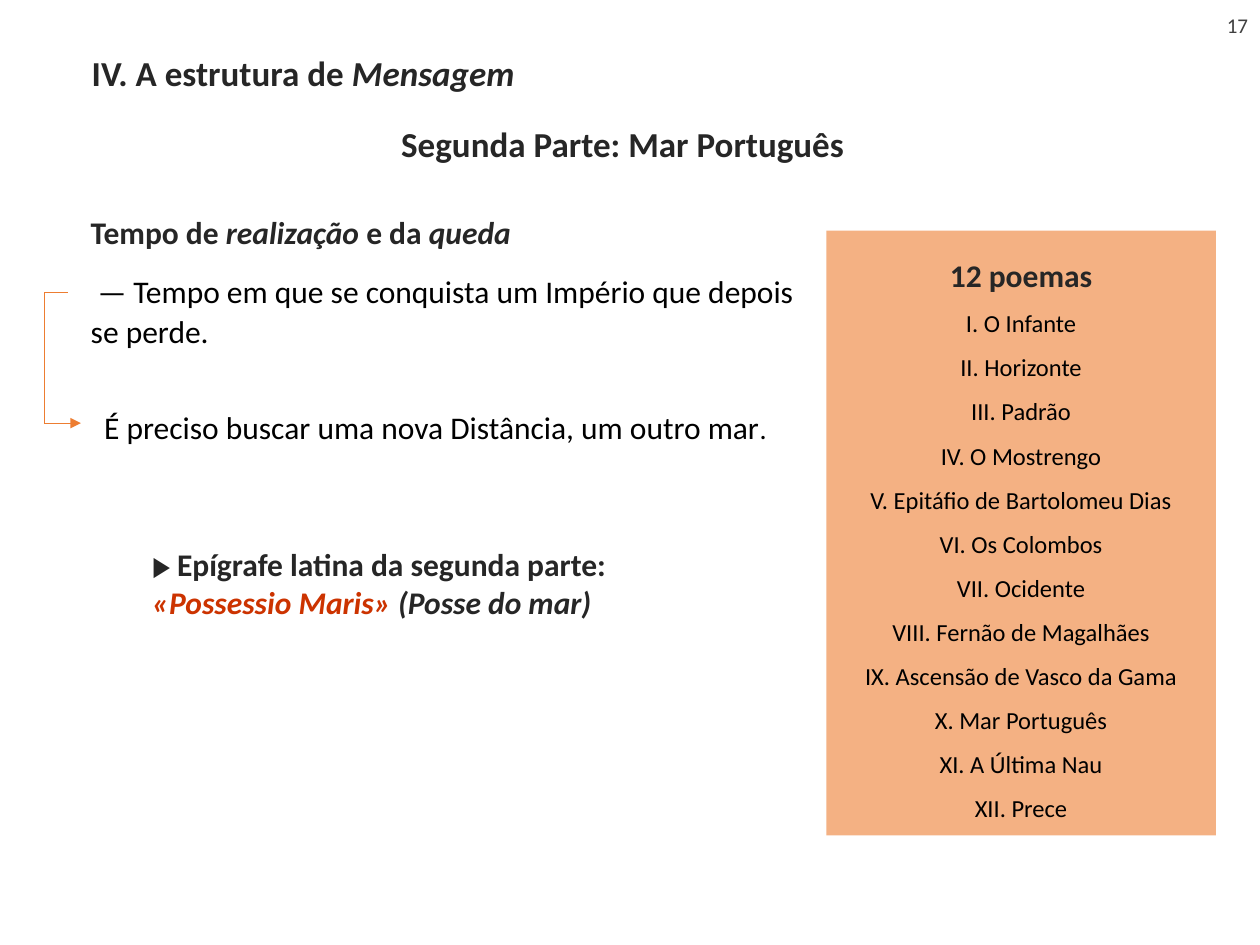
import lxml.etree
import pptx
import pptx.dml.color
import pptx.enum.shapes
import pptx.enum.text
import pptx.oxml.ns
import pptx.util

Cm = pptx.util.Cm
Pt = pptx.util.Pt
color = pptx.dml.color.RGBColor.from_string
ALIGN = pptx.enum.text.PP_ALIGN
DARK, BLACK, GREY, RED = "262626", "000000", "404040", "CC3300"
ORANGE, PEACH = "ED7D31", "F4B183"

presentation = pptx.Presentation()
presentation.slide_width = Cm(25.4)
presentation.slide_height = Cm(19.05)
slide = presentation.slides.add_slide(presentation.slide_layouts[6])


def add_text_box(left, top, width, height):
    frame = slide.shapes.add_textbox(Cm(left), Cm(top), Cm(width), Cm(height)).text_frame
    frame.word_wrap = True
    return frame


def write_paragraph(paragraph, runs, align=ALIGN.LEFT, spacing=None):
    """Each run is (text, size, colour, style), style holding b and/or i."""
    paragraph.alignment = align
    paragraph.line_spacing = spacing
    for text, size, colour, style in runs:
        run = paragraph.add_run()
        run.text = text
        run.font.name = "Calibri"
        run.font.size = Pt(size)
        run.font.bold = "b" in style
        run.font.italic = "i" in style
        run.font.color.rgb = color(colour)


# Time of achievement and fall
frame = add_text_box(1.65, 4.29, 14.99, 2.79)
frame.margin_left = frame.margin_right = Cm(0.18)
frame.margin_top = frame.margin_bottom = Cm(0.1)
write_paragraph(frame.paragraphs[0], [
    ("Tempo de ", 18, DARK, "b"),
    ("realização", 18, DARK, "bi"),
    (" e da ", 18, DARK, "b"),
    ("queda", 18, DARK, "bi"),
], spacing=0.9)
paragraph = frame.add_paragraph()
paragraph.space_before = Pt(10)
write_paragraph(paragraph, [
    (" — Tempo em que se conquista um Império que depois se perde.", 18, BLACK, ""),
], spacing=Pt(23))

# Panel with the list of poems
panel = slide.shapes.add_shape(
    pptx.enum.shapes.MSO_SHAPE.RECTANGLE, Cm(16.66), Cm(4.65), Cm(7.85), Cm(12.19))
panel.shadow.inherit = False
panel.fill.solid()
panel.fill.fore_color.rgb = color(PEACH)
panel.line.fill.background()
frame = panel.text_frame
frame.word_wrap = True
frame.vertical_anchor = pptx.enum.text.MSO_ANCHOR.TOP
write_paragraph(frame.paragraphs[0], [("12 poemas", 18, DARK, "b")], ALIGN.CENTER, 1.5)
poems = [
    "I. O Infante", "II. Horizonte", "III. Padrão", "IV. O Mostrengo",
    "V. Epitáfio de Bartolomeu Dias", "VI. Os Colombos", "VII. Ocidente",
    "VIII. Fernão de Magalhães", "IX. Ascensão de Vasco da Gama",
    "X. Mar Português", "XI. A Última Nau", "XII. Prece",
]
for poem in poems:
    write_paragraph(frame.add_paragraph(), [(poem, 14, BLACK, "")], ALIGN.CENTER, 1.5)

# Page number
frame = add_text_box(19.69, 0, 5.72, 1.02)
frame.vertical_anchor = pptx.enum.text.MSO_ANCHOR.MIDDLE
write_paragraph(frame.paragraphs[0], [("17", 12, GREY, "")], ALIGN.RIGHT)

# Title, set in a little from its box
frame = add_text_box(1.22, 1.07, 15.11, 0.97)
frame.margin_left = Cm(0.63)
write_paragraph(frame.paragraphs[0], [
    ("IV. A estrutura de ", 20, DARK, "b"),
    ("Mensagem", 20, DARK, "bi"),
], spacing=0.8)

# Subtitle
frame = add_text_box(7.21, 2.51, 10.69, 0.97)
write_paragraph(frame.paragraphs[0], [
    ("Segunda Parte: Mar Português", 20, DARK, "b"),
], ALIGN.CENTER, 0.8)

# Bracket arrow from the first statement to the second
corners = [(1.37, 5.89), (0.89, 5.89), (0.89, 8.53), (1.63, 8.53)]
for (start_x, start_y), (end_x, end_y) in zip(corners, corners[1:]):
    connector = slide.shapes.add_connector(
        pptx.enum.shapes.MSO_CONNECTOR.STRAIGHT,
        Cm(start_x), Cm(start_y), Cm(end_x), Cm(end_y))
    connector.line.color.rgb = color(ORANGE)
    connector.line.width = Pt(0.5)
    properties = connector._element.spPr
    lxml.etree.SubElement(properties, pptx.oxml.ns.qn("a:effectLst"))
# The last segment carries the arrowhead
lxml.etree.SubElement(
    connector.line._get_or_add_ln(), pptx.oxml.ns.qn("a:tailEnd"), type="triangle")

# Second statement
frame = add_text_box(1.85, 8.1, 14, 1.02)
write_paragraph(frame.paragraphs[0], [
    ("É preciso buscar uma nova Distância, um outro mar", 18, BLACK, ""),
    (".", 16, BLACK, ""),
])

# Latin epigraph
frame = add_text_box(2.82, 10.87, 12.5, 2.64)
write_paragraph(frame.paragraphs[0], [
    ("▶ ", 16, DARK, "b"),
    ("Epígrafe latina da segunda parte:", 18, DARK, "b"),
])
write_paragraph(frame.add_paragraph(), [
    ("«Possessio Maris»", 18, RED, "bi"),
    (" (Posse do mar)", 18, DARK, "bi"),
])

presentation.save("out.pptx")
